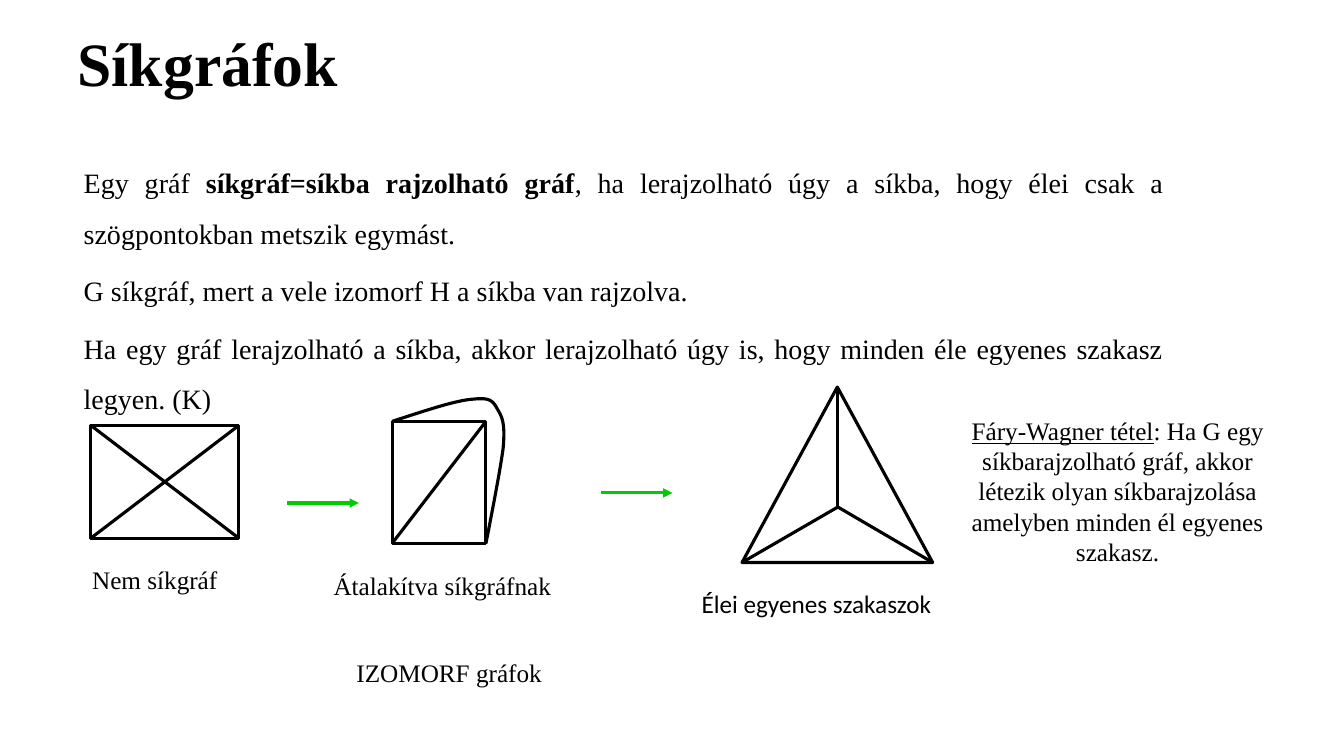
from lxml import etree
from pptx import Presentation
from pptx.dml.color import RGBColor
from pptx.enum.shapes import MSO_CONNECTOR, MSO_SHAPE
from pptx.enum.text import MSO_ANCHOR, MSO_AUTO_SIZE, PP_ALIGN
from pptx.oxml.ns import qn
from pptx.util import Inches, Pt

LEFT, CENTER, JUSTIFY = PP_ALIGN.LEFT, PP_ALIGN.CENTER, PP_ALIGN.JUSTIFY
TOP, BOTTOM = MSO_ANCHOR.TOP, MSO_ANCHOR.BOTTOM
FIXED = MSO_AUTO_SIZE.NONE
STRAIGHT = MSO_CONNECTOR.STRAIGHT
RECT, TRIANGLE = MSO_SHAPE.RECTANGLE, MSO_SHAPE.ISOSCELES_TRIANGLE

COLORS = {"ink": "000000", "arrow": "00CC00"}
SERIF, SANS = "Times New Roman", "Calibri"
WEIGHT = 2.25

# A paragraph is a list of (text, style) runs; style is "", "b" or "u".
TITLE = [[("Síkgráfok", "b")]]
BODY = [
    [("Egy gráf ", ""), ("síkgráf=síkba rajzolható gráf", "b"),
     (", ha lerajzolható úgy a síkba, hogy élei csak a szögpontokban "
      "metszik egymást.", "")],
    [("G síkgráf, mert a vele izomorf H a síkba van rajzolva.", "")],
    [("Ha egy gráf lerajzolható a síkba, akkor lerajzolható úgy is, hogy "
      "minden éle egyenes szakasz legyen. (K)", "")],
]
THEOREM = [
    ("Fáry-Wagner tétel", "u"),
    (": Ha G egy síkbarajzolható gráf, akkor létezik olyan síkbarajzolása "
     "amelyben minden él egyenes szakasz.", ""),
]
# box, runs, alignment, font
LABELS = [
    ((0.51, 5.55, 2.05, 0.4), [("Nem síkgráf", "")], CENTER, SERIF),
    ((3.21, 5.61, 2.84, 0.4), [("Átalakítva síkgráfnak", "")], LEFT, SERIF),
    ((6.86, 5.79, 2.91, 0.4), [("Élei egyenes szakaszok", "")], LEFT, SANS),
    ((2.85, 6.47, 3.21, 0.4), [("IZOMORF gráfok", "")], CENTER, SERIF),
    ((9.32, 4.07, 3.53, 1.62), THEOREM, CENTER, SERIF),
]
CROSSED = (0.9, 4.22, 1.47, 1.12)
PLANAR = (3.89, 4.18, 0.93, 1.21)
OUTER = (7.36, 3.84, 1.89, 1.74)
HUB = (8.31, 5.03)
ARROWS = [(2.85, 4.99), (5.96, 4.89)]
ARROW_LEN = 0.71
# Bezier segments of the bent edge: two controls and an end each
BEND = [
    ((4.2, 4.08), (4.52, 3.97), (4.69, 3.96)),
    ((4.87, 3.94), (4.89, 3.98), (4.94, 4.07)),
    ((4.99, 4.15), (5.01, 4.23), (4.99, 4.45)),
    ((4.96, 4.67), (4.89, 5.03), (4.82, 5.39)),
]
STEPS = 12

deck = Presentation()
deck.slide_width, deck.slide_height = Inches(13.33), Inches(7.5)
slide = deck.slides.add_slide(deck.slide_layouts[1])
shapes = slide.shapes


def place(shape, box):
    shape.left, shape.top, shape.width, shape.height = map(Inches, box)


def write(shape, paras, size, font=SERIF, align=LEFT, anchor=TOP,
          spacing=None, before=0, margin=None):
    frame = shape.text_frame
    frame.word_wrap, frame.auto_size = True, FIXED
    frame.vertical_anchor = anchor
    for i, runs in enumerate(paras):
        para = frame.add_paragraph() if i else frame.paragraphs[0]
        para.alignment, para.space_before = align, Pt(before)
        if spacing:
            para.line_spacing = spacing
        if margin is not None:
            props = para._p.get_or_add_pPr()
            props.set("marL", str(Inches(margin)))
            props.set("indent", "0")
            etree.SubElement(props, qn("a:buNone"))
        for text, style in runs:
            run = para.add_run()
            run.text = text
            face = run.font
            face.name, face.size = font, Pt(size)
            face.bold, face.underline = style == "b", style == "u"
            face.color.rgb = RGBColor.from_string(COLORS["ink"])


def stroke(shape, color="ink"):
    shape.line.color.rgb = RGBColor.from_string(COLORS[color])
    shape.line.width = Pt(WEIGHT)


def outline(shape):
    """Leave only the border of a shape."""
    shape.fill.background()
    shape.shadow.inherit = False
    stroke(shape)


def frame(kind, box):
    outline(shapes.add_shape(kind, *map(Inches, box)))


def edge(start, end, color="ink", arrow=False):
    line = shapes.add_connector(STRAIGHT, *map(Inches, (*start, *end)))
    stroke(line, color)
    if arrow:
        tip = etree.SubElement(line.line._get_or_add_ln(), qn("a:tailEnd"))
        tip.set("type", "triangle")
    etree.SubElement(line._element.spPr, qn("a:effectLst"))


def corners(box):
    """Top left, top right, bottom left, bottom right."""
    x, y, w, h = box
    return (x, y), (x + w, y), (x, y + h), (x + w, y + h)


def curve(start, segments):
    points = []
    for a, b, end in segments:
        for step in range(1, STEPS + 1):
            t = step / STEPS
            u = 1 - t
            points.append(tuple(
                Inches(u**3 * p + 3 * u * u * t * q + 3 * u * t * t * r + t**3 * s)
                for p, q, r, s in zip(start, a, b, end)))
        start = end
    return points


title, body = shapes.title, slide.placeholders[1]
place(title, (0.67, 0.25, 12, 0.79))
write(title, TITLE, 44, anchor=BOTTOM, spacing=0.9)
place(body, (0.23, 1.43, 11.41, 3.73))
write(body, BODY, 20, align=JUSTIFY, spacing=1.5, before=5, margin=0.5)

for box, runs, align, font in LABELS:
    write(shapes.add_textbox(*map(Inches, box)), [runs], 18, font, align)

frame(RECT, CROSSED)
nw, ne, sw, se = corners(CROSSED)
edge(nw, se)
edge(sw, ne)

frame(RECT, PLANAR)
nw, ne, sw, se = corners(PLANAR)
edge(sw, ne)
pen = shapes.build_freeform(*map(Inches, nw))
pen.add_line_segments(curve(nw, BEND), close=False)
outline(pen.convert_to_shape())

frame(TRIANGLE, OUTER)
nw, ne, sw, se = corners(OUTER)
for tip in ((HUB[0], OUTER[1]), sw, se):
    edge(tip, HUB)

for x, y in ARROWS:
    edge((x, y), (x + ARROW_LEN, y), "arrow", arrow=True)

deck.save("out.pptx")
